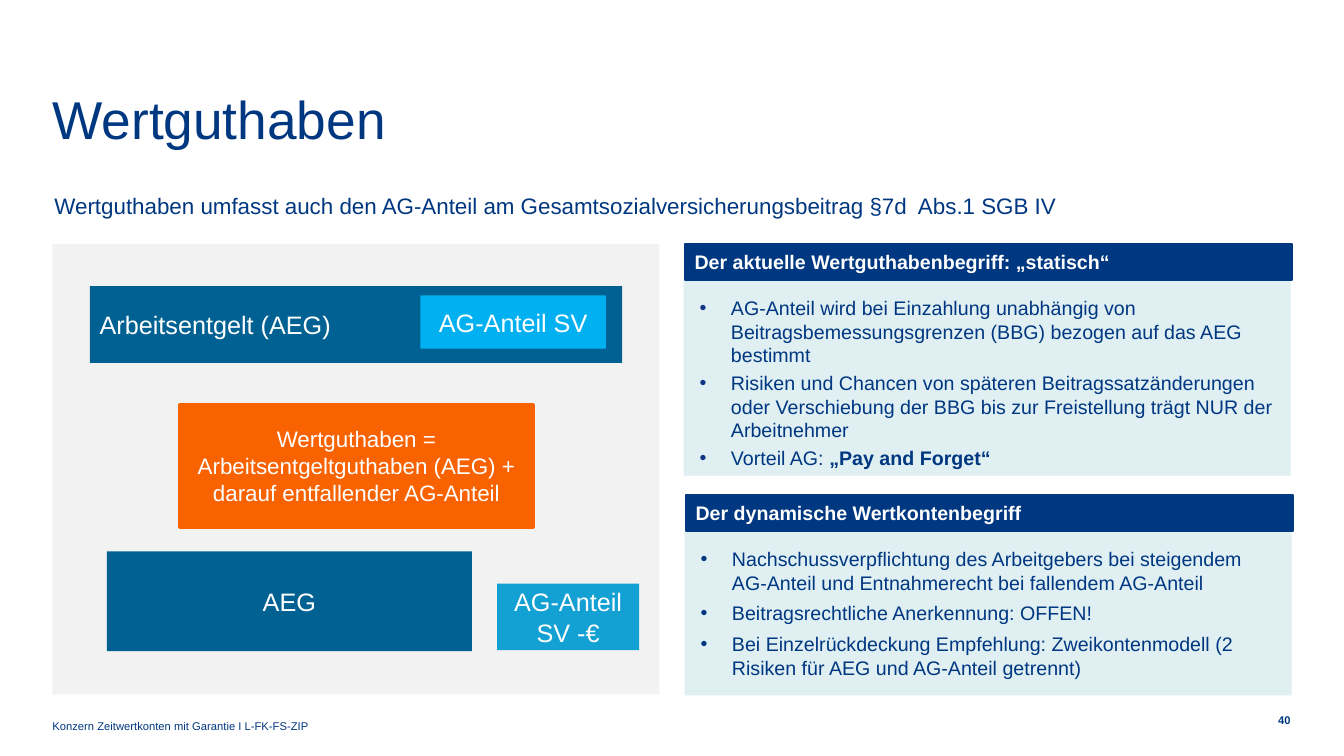
from dataclasses import dataclass

from lxml import etree
from pptx import Presentation
from pptx.dml.color import RGBColor
from pptx.enum.shapes import MSO_SHAPE
from pptx.enum.text import MSO_ANCHOR, PP_ALIGN
from pptx.oxml.ns import qn
from pptx.util import Inches, Pt

RECTANGLE = MSO_SHAPE.RECTANGLE
TOP, MIDDLE, BOTTOM = MSO_ANCHOR.TOP, MSO_ANCHOR.MIDDLE, MSO_ANCHOR.BOTTOM
LEFT, CENTER, RIGHT = PP_ALIGN.LEFT, PP_ALIGN.CENTER, PP_ALIGN.RIGHT


@dataclass(frozen=True)
class Theme:
    """Colours, type sizes and the grid cell of the slide."""
    font: str = "Arial"
    navy: str = "003781"
    bullet_blue: str = "113388"
    petrol: str = "006192"
    sky: str = "00B0F0"
    sea: str = "13A0D3"
    orange: str = "F86200"
    mist: str = "DFEFF2"
    grey: str = "F2F2F2"
    white: str = "FFFFFF"
    title: int = 38
    label: int = 18
    lead: int = 16
    body: int = 14
    small: int = 8
    cell: float = 0.1


class Page:
    """Draws styled elements on one slide, placed in grid columns and rows."""

    def __init__(self, deck, theme):
        """Add a blank slide to the deck."""
        self.theme = theme
        self.shapes = deck.slides.add_slide(deck.slide_layouts[6]).shapes

    def place(self, area):
        """Turn columns and rows into lengths."""
        return [Inches(round(units * self.theme.cell, 2)) for units in area]

    def frame(self, box, anchor, inset=None):
        """Set wrapping, anchor and insets of a box."""
        formats = {"word_wrap": True, "vertical_anchor": anchor}
        if inset is not None:
            for side in ("left", "top", "right", "bottom"):
                formats[f"margin_{side}"] = Inches(inset)
        for name, value in formats.items():
            setattr(box.text_frame, name, value)
        return box.text_frame

    def span(self, para, text, size, colour, bold=False):
        """Add one run of text to a paragraph."""
        font = para.add_run()
        font.text = text
        formats = {"name": self.theme.font, "size": Pt(size), "bold": bold}
        for name, value in formats.items():
            setattr(font.font, name, value)
        font.font.color.rgb = RGBColor.from_string(colour)

    def text(self, area, text, size, anchor=TOP, align=LEFT, spacing=None, bold=False):
        """Place a plain line of text without insets."""
        box = self.shapes.add_textbox(*self.place(area))
        para = self.frame(box, anchor, 0).paragraphs[0]
        for name, value in {"alignment": align, "line_spacing": spacing}.items():
            setattr(para, name, value)
        self.span(para, text, size, self.theme.navy, bold)

    def block(self, area, fill, line=None):
        """Draw a filled rectangle, outlined in its own colour if line is given."""
        box = self.shapes.add_shape(RECTANGLE, *self.place(area))
        box.shadow.inherit = False
        box.fill.solid()
        box.fill.fore_color.rgb = RGBColor.from_string(fill)
        if line:
            box.line.color.rgb = RGBColor.from_string(fill)
            box.line.width = Pt(line)
        else:
            box.line.fill.background()
        return box

    def label(self, area, text, fill, size, align=CENTER, line=None, bold=False):
        """Draw a rectangle with white text in its middle."""
        box = self.block(area, fill, line)
        para = self.frame(box, MIDDLE).paragraphs[0]
        para.alignment = align
        self.span(para, text, size, self.theme.white, bold)

    def bullets(self, area, items, gap, colour):
        """Draw a pale panel with bullets, each a list of text and bold pairs."""
        frame = self.frame(self.block(area, self.theme.mist), TOP, 0.16)
        for index, item in enumerate(items):
            para = frame.add_paragraph() if index else frame.paragraphs[0]
            para.alignment = LEFT
            if index:
                para.space_before = Pt(gap)
            props = para._p.get_or_add_pPr()
            for name, value in {"marL": 0.31, "indent": -0.31}.items():
                props.set(name, str(Inches(value)))
            tint = etree.SubElement(props, qn("a:buClr"))
            etree.SubElement(tint, qn("a:srgbClr"), val=colour)
            etree.SubElement(props, qn("a:buFont"), typeface=self.theme.font)
            etree.SubElement(props, qn("a:buChar"), char="•")
            for text, bold in item:
                self.span(para, text, self.theme.body, self.theme.navy, bold)


def main():
    """Build the slide and save it."""
    theme = Theme()
    deck = Presentation()
    deck.slide_width, deck.slide_height = Inches(13.33), Inches(7.5)
    page = Page(deck, theme)

    page.text((5.2, 9.6, 102, 10.2), "Wertguthaben", theme.title, spacing=Pt(38))
    page.text((5.4, 19.1, 115.8, 3.2),
              "Wertguthaben umfasst auch den AG-Anteil am "
              "Gesamtsozialversicherungsbeitrag §7d  Abs.1 SGB IV", theme.lead)

    page.block((5.2, 24.2, 60.2, 44.7), theme.grey)
    for area, text, fill, align in (
        ((8.9, 28.4, 52.8, 7.6), "Arbeitsentgelt (AEG)", theme.petrol, LEFT),
        ((41.7, 29.3, 18.4, 5.3), "AG-Anteil SV", theme.sky, CENTER),
        ((10.6, 54.7, 36.2, 9.9), "AEG", theme.petrol, CENTER),
        ((49.3, 57.9, 14.1, 6.6), "AG-Anteil SV -€", theme.sea, CENTER),
    ):
        page.label(area, text, fill, theme.label, align)
    page.label((17.8, 40.1, 35.1, 12.2),
               "Wertguthaben = Arbeitsentgeltguthaben (AEG) + "
               "darauf entfallender AG-Anteil", theme.orange, theme.lead, line=2)

    static_items = (
        [("AG-Anteil wird bei Einzahlung unabhängig von Beitragsbemessungsgrenzen "
          "(BBG) bezogen auf das AEG bestimmt", False)],
        [("Risiken und Chancen von späteren Beitragssatzänderungen oder Verschiebung "
          "der BBG bis zur Freistellung trägt NUR der Arbeitnehmer", False)],
        [("Vorteil AG: ", False), ("„Pay and Forget“", True)],
    )
    dynamic_items = (
        [("Nachschussverpflichtung des Arbeitgebers bei steigendem AG-Anteil und "
          "Entnahmerecht bei fallendem AG-Anteil", False)],
        [("Beitragsrechtliche Anerkennung: OFFEN!", False)],
        [("Bei Einzelrückdeckung Empfehlung: Zweikontenmodell (2 Risiken für AEG "
          "und AG-Anteil getrennt)", False)],
    )
    width, head = 60.2, 3.6
    for left, top, height, heading, items, gap, colour in (
        (67.8, 24.2, 19.4, "Der aktuelle Wertguthabenbegriff: „statisch“",
         static_items, 3, theme.bullet_blue),
        (67.9, 49.1, 16.3, "Der dynamische Wertkontenbegriff",
         dynamic_items, 5, theme.navy),
    ):
        page.bullets((left, top + head, width, height), items, gap, colour)
        page.label((left + 0.1, top, width, head), heading, theme.navy, theme.body,
                   LEFT, 1.5, True)

    page.text((5.2, 68.9, 102, 3.8), "Konzern Zeitwertkonten mit Garantie I L-FK-FS-ZIP",
              theme.small, BOTTOM, spacing=0.9)
    page.text((125.1, 70.6, 2.9, 1.6), "40", theme.small, MIDDLE, RIGHT, Pt(10), True)

    deck.save("out.pptx")


if __name__ == "__main__":
    main()
